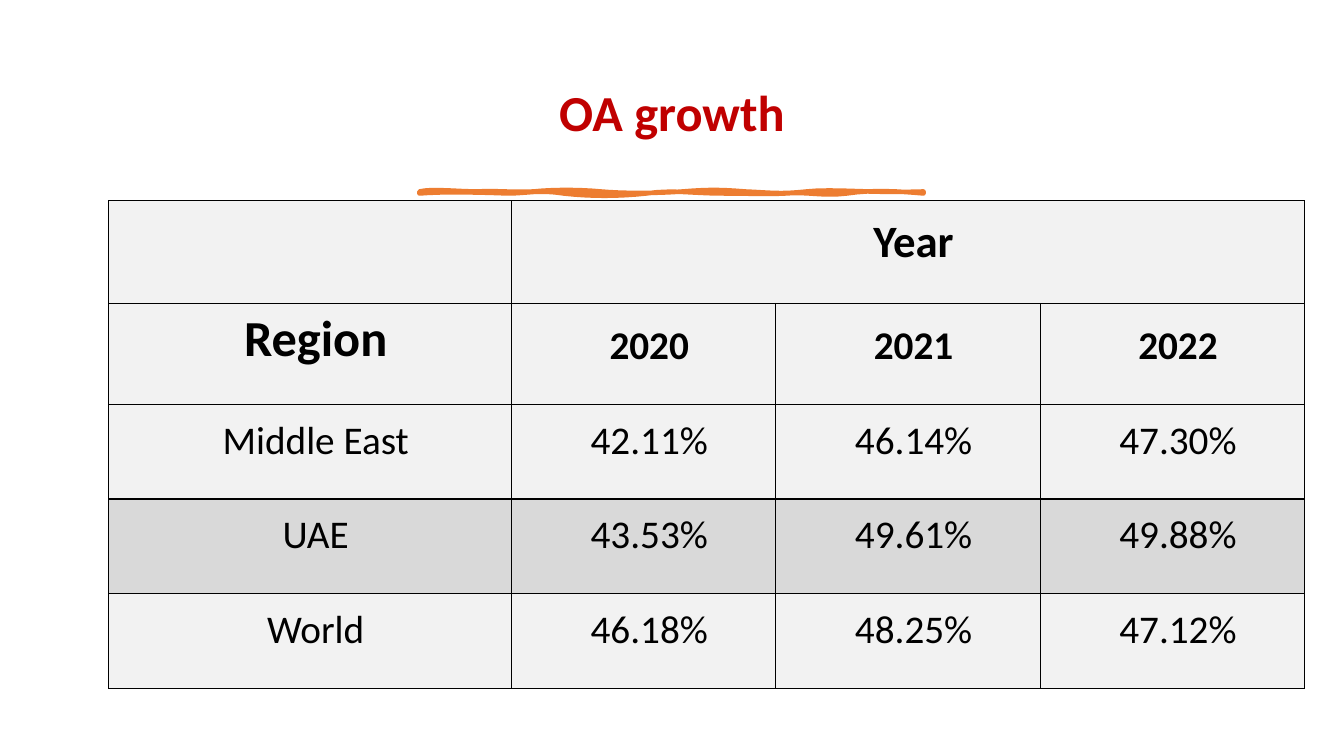
from dataclasses import dataclass

from lxml.etree import SubElement
from pptx import Presentation
from pptx.dml.color import RGBColor
from pptx.enum.text import MSO_ANCHOR, PP_ALIGN
from pptx.oxml.ns import qn
from pptx.util import Inches, Pt


@dataclass(frozen=True)
class Theme:
    font: str = "Calibri"
    title: str = "C00000"
    accent: str = "ED7D31"
    ink: str = "000000"
    light: str = "F2F2F2"
    highlight: str = "D9D9D9"
    title_size: int = 36
    year_size: int = 32
    body_size: int = 28
    brush_width: float = 3.25
    border_width: float = 1


THEME = Theme()

TITLE_BOX = (0.7, 0.46, 11.93, 1.37)
BRUSH_BOX = (4.16, 1.9, 5, 0.02)
TABLE_BOX = (1.08, 1.99, 11.86, 4.84)
COLUMN_WEIGHTS = (3.99, 2.62, 2.62, 2.62)
ROW_WEIGHTS = (1.02, 1, 0.94, 0.94, 0.94)

TABLE_ROWS = (
    ("", "Year", "", ""),
    ("Region", "2020", "2021", "2022"),
    ("Middle East", "42.11%", "46.14%", "47.30%"),
    ("UAE", "43.53%", "49.61%", "49.88%"),
    ("World", "46.18%", "48.25%", "47.12%"),
)
HEADER_ROWS = 2
HIGHLIGHT_ROW = 3

BRUSH_TOP = (
    (0, 0), (12, -3), (38, 0), (57, 0), (76, -1), (93, 1), (113, 0),
    (133, -2), (158, -2), (180, 0), (201, 2), (237, 2), (261, 0),
    (286, -2), (298, -2), (323, 0), (347, 1), (358, 3), (384, 0),
    (410, -3), (451, 2), (500, 0),
)
BRUSH_BOTTOM = (
    (500, 2), (479, 0), (449, -2), (424, 2), (399, 5), (385, 0), (363, 2),
    (340, 3), (331, 2), (301, 2), (271, 2), (251, -2), (225, 2),
    (198, 5), (169, 5), (143, 2), (118, -2), (107, 2), (87, 2),
    (67, 1), (22, 0), (0, 2),
)


def color(value):
    return RGBColor.from_string(value)


def write_text(frame, text, *, size, ink=THEME.ink, bold=False, spacing=None):
    paragraph = frame.paragraphs[0]
    paragraph.alignment = PP_ALIGN.CENTER
    if spacing:
        paragraph.line_spacing = spacing
    run = paragraph.add_run()
    run.text = text
    run.font.name = THEME.font
    run.font.size = Pt(size)
    run.font.bold = bold
    run.font.color.rgb = color(ink)


def curve_points(controls, steps=8):
    points = [controls[0]]
    for first in range(0, len(controls) - 1, 3):
        a, b, c, d = controls[first:first + 4]
        for step in range(1, steps + 1):
            t = step / steps
            u = 1 - t
            points.append(tuple(
                u**3 * p + 3 * u * u * t * q + 3 * u * t * t * r + t**3 * s
                for p, q, r, s in zip(a, b, c, d)
            ))
    return points


def add_title(slide, box):
    frame = slide.shapes.add_textbox(*map(Inches, box)).text_frame
    frame.word_wrap = True
    frame.vertical_anchor = MSO_ANCHOR.MIDDLE
    write_text(frame, "OA growth", size=THEME.title_size, ink=THEME.title,
               bold=True, spacing=0.9)


def add_brush_stroke(slide, box):
    left, top, width, _ = box
    unit = width / 500
    outline = [
        (Inches(left + x * unit), Inches(top + y * unit))
        for x, y in curve_points(BRUSH_TOP) + curve_points(BRUSH_BOTTOM)
    ]
    builder = slide.shapes.build_freeform(*outline[0])
    builder.add_line_segments(outline[1:], close=True)
    stroke = builder.convert_to_shape()
    stroke.shadow.inherit = False
    stroke.fill.solid()
    stroke.fill.fore_color.rgb = color(THEME.accent)
    stroke.line.color.rgb = color(THEME.accent)
    stroke.line.width = Pt(THEME.brush_width)
    SubElement(stroke.line._get_or_add_ln(), qn("a:round"))


def add_borders(cell):
    properties = cell._tc.get_or_add_tcPr()
    for position, side in enumerate(("lnL", "lnR", "lnT", "lnB")):
        border = SubElement(properties, qn(f"a:{side}"), w=str(Pt(THEME.border_width)))
        fill = SubElement(border, qn("a:solidFill"))
        SubElement(fill, qn("a:srgbClr"), val=THEME.ink)
        properties.insert(position, border)


def text_size(text):
    return {"Year": THEME.year_size, "Region": THEME.title_size}.get(text, THEME.body_size)


def format_cell(cell, text, row):
    cell.fill.solid()
    cell.fill.fore_color.rgb = color(THEME.highlight if row == HIGHLIGHT_ROW else THEME.light)
    add_borders(cell)
    if text:
        cell.vertical_anchor = MSO_ANCHOR.BOTTOM
        cell.margin_left, cell.margin_bottom = Inches(0.16), Inches(0.34)
        cell.margin_right = cell.margin_top = Inches(0.05)
        write_text(cell.text_frame, text, size=text_size(text), bold=row < HEADER_ROWS)


def add_growth_table(slide, box):
    _, _, width, height = box
    table = slide.shapes.add_table(
        len(ROW_WEIGHTS), len(COLUMN_WEIGHTS), *map(Inches, box)).table
    table.first_row = table.horz_banding = False
    for column, weight in zip(table.columns, COLUMN_WEIGHTS):
        column.width = Inches(width * weight / sum(COLUMN_WEIGHTS))
    for row, weight in zip(table.rows, ROW_WEIGHTS):
        row.height = Inches(height * weight / sum(ROW_WEIGHTS))
    for row, texts in enumerate(TABLE_ROWS):
        for column, text in enumerate(texts):
            format_cell(table.cell(row, column), text, row)
    table.cell(0, 1).merge(table.cell(0, 3))


def main():
    presentation = Presentation()
    presentation.slide_width = Inches(13.33)
    presentation.slide_height = Inches(7.5)
    slide = presentation.slides.add_slide(presentation.slide_layouts[6])
    add_title(slide, TITLE_BOX)
    add_brush_stroke(slide, BRUSH_BOX)
    add_growth_table(slide, TABLE_BOX)
    presentation.save("out.pptx")


if __name__ == "__main__":
    main()
